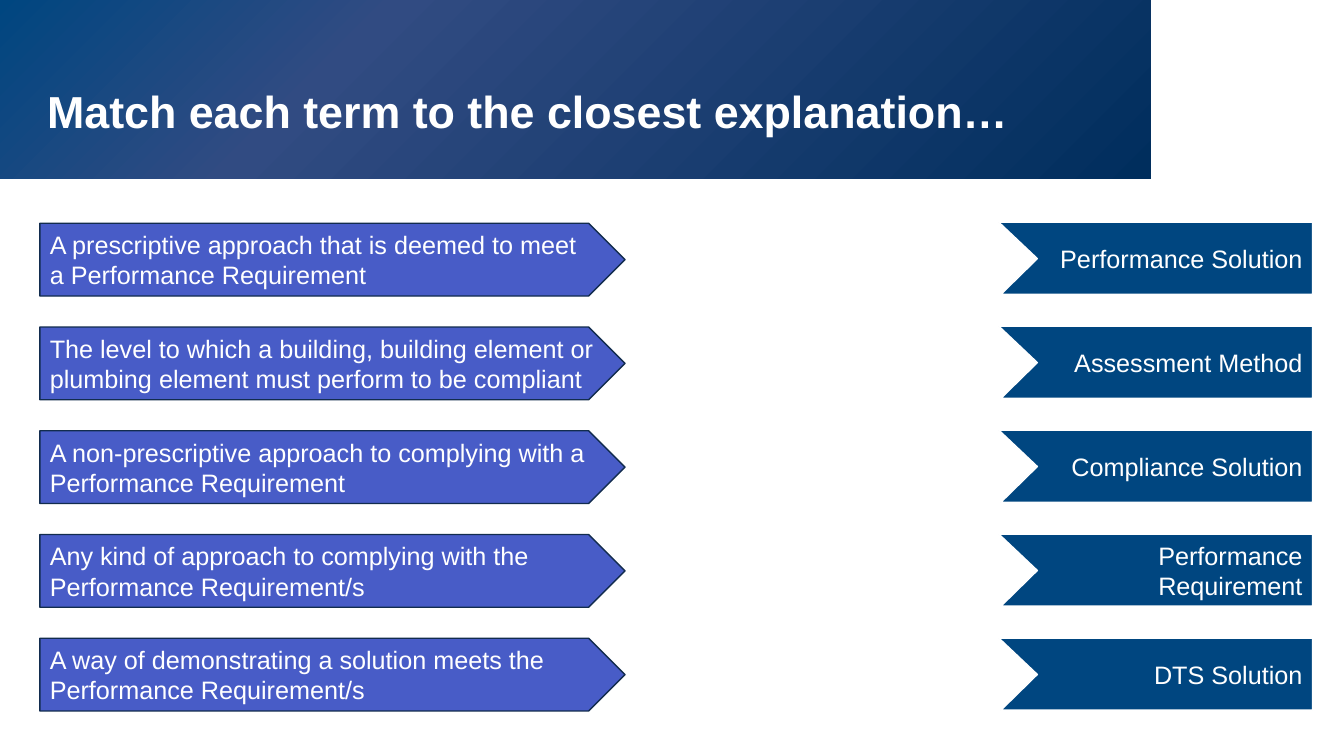
from copy import deepcopy

from pptx import Presentation
from pptx.dml.color import RGBColor
from pptx.enum.shapes import MSO_SHAPE
from pptx.enum.text import MSO_ANCHOR, PP_ALIGN
from pptx.util import Pt

RECTANGLE = MSO_SHAPE.RECTANGLE
PENTAGON = MSO_SHAPE.PENTAGON
MIDDLE, BOTTOM = MSO_ANCHOR.MIDDLE, MSO_ANCHOR.BOTTOM
LEFT, RIGHT = PP_ALIGN.LEFT, PP_ALIGN.RIGHT

WHITE, NAVY, INDIGO, OUTLINE = "FFFFFF", "004680", "485CC7", "122C4E"
BANNER_STOPS = [(0, NAVY), (0.3, "314B82"), (1, "002E5D")]

EXPLANATIONS = [
    "A prescriptive approach that is deemed to meet a Performance Requirement",
    "The level to which a building, building element or plumbing element must perform to be compliant",
    "A non-prescriptive approach to complying with a Performance Requirement",
    "Any kind of approach to complying with the Performance Requirement/s",
    "A way of demonstrating a solution meets the Performance Requirement/s",
]
TERMS = [
    "Performance Solution",
    "Assessment Method",
    "Compliance Solution",
    "Performance Requirement",
    "DTS Solution",
]


def color(value):
    return RGBColor.from_string(value)


def write(shape, text, size, align, anchor, bold=False):
    frame = shape.text_frame
    frame.word_wrap = True
    frame.vertical_anchor = anchor
    paragraph = frame.paragraphs[0]
    paragraph.alignment = align
    run = paragraph.add_run()
    run.text = text
    run.font.name = "Arial"
    run.font.size = Pt(size)
    run.font.bold = bold
    run.font.color.rgb = color(WHITE)


def paint(shape, fill, line):
    shape.shadow.inherit = False
    shape.fill.solid()
    shape.fill.fore_color.rgb = color(fill)
    shape.line.color.rgb = color(line)
    shape.line.width = Pt(1)


def add_banner(slide):
    banner = slide.shapes.add_shape(RECTANGLE, 0, 0, Pt(822), Pt(127.5))
    banner.shadow.inherit = False
    banner.line.fill.background()
    banner.fill.gradient()
    banner.fill.gradient_angle = 315
    first_stop = banner.fill._fill._gradFill.gsLst[0]
    first_stop.addnext(deepcopy(first_stop))
    for stop, (position, shade) in zip(banner.fill.gradient_stops, BANNER_STOPS):
        stop.color.rgb = color(shade)
        stop.position = position


def add_title(slide, text):
    title = slide.shapes.add_textbox(Pt(26.5), Pt(24.5), Pt(737.5), Pt(77))
    write(title, text, 32, LEFT, BOTTOM, bold=True)
    title.text_frame.paragraphs[0].space_after = Pt(2)


def add_explanation(slide, top, text):
    arrow = slide.shapes.add_shape(PENTAGON, Pt(28.5), Pt(top), Pt(418), Pt(52))
    paint(arrow, INDIGO, OUTLINE)
    write(arrow, text, 18, LEFT, MIDDLE)


def add_term(slide, top, text):
    outline = [(937.5, 0), (937.5, 51.5), (715, 51.5), (741, 26)]
    builder = slide.shapes.build_freeform(Pt(713.5), Pt(top))
    builder.add_line_segments([(Pt(x), Pt(top + y)) for x, y in outline], close=True)
    tag = builder.convert_to_shape()
    paint(tag, NAVY, WHITE)
    write(tag, text, 18, RIGHT, MIDDLE)
    tag.text_frame.margin_left = Pt(10)


def main():
    deck = Presentation()
    deck.slide_width, deck.slide_height = Pt(960), Pt(540)
    slide = deck.slides.add_slide(deck.slide_layouts[6])
    add_banner(slide)
    add_title(slide, "Match each term to the closest explanation…")
    for row, (explanation, term) in enumerate(zip(EXPLANATIONS, TERMS)):
        add_explanation(slide, 159.5 + row * 74.1, explanation)
        add_term(slide, 158.75 + row * 74.25, term)
    deck.save("out.pptx")


if __name__ == "__main__":
    main()
